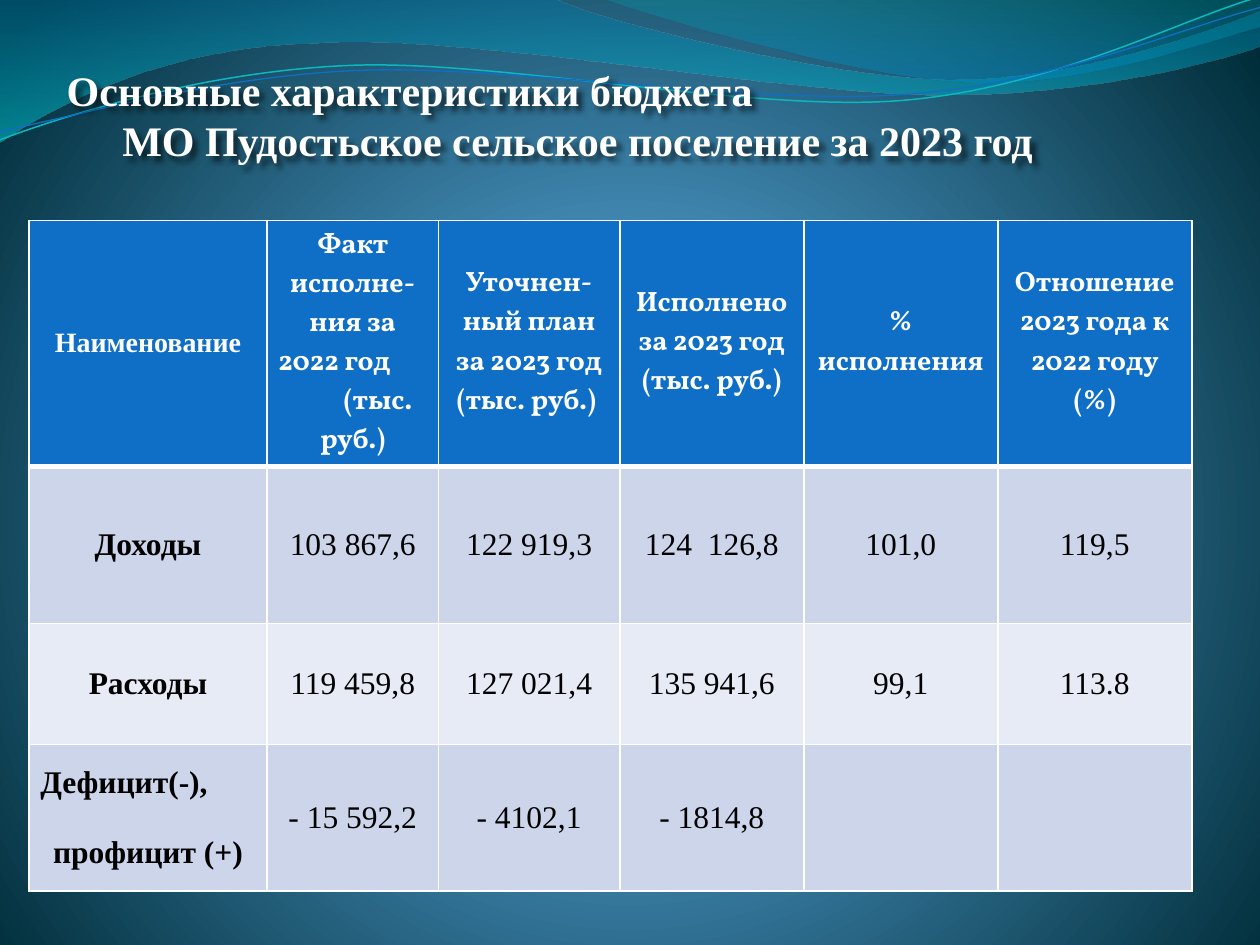
"""Budget summary slide: wave background, title and a table of income, expenses and balance."""
from lxml import etree
from pptx import Presentation
from pptx import util as u
from pptx.dml.color import RGBColor
from pptx.enum import text
from pptx.oxml import ns, parse_xml

Inches, Pt = u.Inches, u.Pt
COLORS = {
    "white": "FFFFFF", "black": "000000", "header": "0F6FC6",
    "band": "CCD5EA", "light": "E7EBF5", "cyan": "0AB8BF", "blue": "0F6FC6",
}
FONT, HEAD_FONT = "Times New Roman", "Vollkorn"


def gradient(stops, direction):
    """Return a gradFill element from (position, colour, opacity) stops."""
    gs = "".join(
        f'<a:gs pos="{pos * 1000}"><a:srgbClr val="{color}">'
        f'<a:alpha val="{alpha * 1000}"/></a:srgbClr></a:gs>'
        for pos, color, alpha in stops)
    return parse_xml(f'<a:gradFill {ns.nsdecls("a")} rotWithShape="1">'
                     f'<a:gsLst>{gs}</a:gsLst>{direction}</a:gradFill>')


def add_wave(shapes, start, segments, close):
    """Draw a freeform whose segments are line ends or cubic curves."""
    points = [(round(seg[k] * 100), round(seg[k + 1] * 100))
              for seg in segments for k in range(0, len(seg), 2)]
    builder = shapes.build_freeform(round(start[0] * 100), round(start[1] * 100),
                                    scale=Inches(0.01))
    builder.add_line_segments(points, close=close)
    sp = builder.convert_to_shape()
    sp.shadow.inherit = False
    lines = iter(list(sp.element.iter(ns.qn("a:lnTo"))))
    for seg in segments:
        line = next(lines)
        if len(seg) == 6:
            line.addprevious(curve := etree.Element(ns.qn("a:cubicBezTo")))
            for part in (line, next(lines), next(lines)):
                curve.append(part[0])
                part.getparent().remove(part)
    return sp


prs = Presentation()
prs.slide_width, prs.slide_height = Inches(10), Inches(7.5)
s = prs.slides.add_slide(prs.slide_layouts[6])

s.background.fill.solid()
bg = s.background.fill._xPr
bg.replace(bg.find(ns.qn("a:solidFill")), gradient(
    [(1, "1F6088", 100), (25, "4C98C7", 100), (100, "002C38", 100)],
    '<a:path path="circle"><a:fillToRect l="10000" t="110000" r="10000" b="100000"/></a:path>'))

waves = [
    ((0, 0), [(4.4, -0.01), (4.76, 0.17, 6.64, 0.63, 7.58, 0.63),
              (8.53, 0.63, 9.58, 0.26, 10, 0.09), (10.01, 0.36),
              (9.83, 0.44, 8.7, 0.76, 7.46, 0.75), (6.22, 0.75, 3.82, 0.28, 2.57, 0.34),
              (1.29, 0.36, 0.46, 0.83, -0.01, 1.13)],
     [(0, "0074A1", 45), (100, "00C6CF", 55)]),
    ((4.79, -0.01), [(5.09, 0.11, 6.82, 0.62, 7.69, 0.65),
                     (8.56, 0.69, 9.61, 0.32, 10, 0.21), (10, 0)],
     [(0, "00A1A9", 30), (80, "008BBF", 45)]),
]
for start, segments, stops in waves:
    sp = add_wave(s.shapes, start, segments, True)
    sp.line.fill.background()
    sp.fill.solid()
    props = sp.element.spPr
    props.replace(props.find(ns.qn("a:solidFill")),
                  gradient(stops, '<a:lin ang="5400000" scaled="1"/>'))

strands = [
    ((0, 1.11), [(0.48, 0.93, 1.58, 0.57, 2.77, 0.52), (3.95, 0.47, 5.93, 0.89, 7.13, 0.8),
                 (8.33, 0.71, 9.38, 0.15, 9.98, -0.02)], "cyan", 0.85),
    ((0, 1.04), [(0.47, 0.96, 1.64, 0.61, 2.83, 0.56), (4.03, 0.51, 5.97, 0.84, 7.17, 0.75),
                 (8.36, 0.67, 9.41, 0.21, 10, 0.06)], "blue", 0.75),
]
for start, segments, color, width in strands:
    sp = add_wave(s.shapes, start, segments, False)
    sp.fill.background()
    sp.line.color.rgb = RGBColor.from_string(COLORS[color])
    sp.line.width = Pt(width)

title = s.shapes.add_textbox(Inches(0.5), Inches(0.13), Inches(8.17), Inches(1.18))
title.element.spPr.append(parse_xml(
    f'<a:effectLst {ns.nsdecls("a")}><a:outerShdw blurRad="38100" dist="38100" dir="2700000">'
    '<a:srgbClr val="000000"><a:alpha val="60000"/></a:srgbClr></a:outerShdw></a:effectLst>'))
tf = title.text_frame
tf.word_wrap = True
tf.vertical_anchor = text.MSO_ANCHOR.BOTTOM
tf.margin_left = tf.margin_right = tf.margin_bottom = 0
tf.text = "Основные характеристики бюджета\nМО Пудостьское сельское поселение за 2023 год"
for p, align in zip(tf.paragraphs, (text.PP_ALIGN.LEFT, text.PP_ALIGN.CENTER)):
    p.alignment = align
    p.font.name, p.font.size, p.font.bold = FONT, Pt(24), True
    p.font.color.rgb = RGBColor.from_string(COLORS["white"])
tf.paragraphs[0]._p.get_or_add_pPr().set("marL", str(Inches(0.03)))

rows = [
    ["Наименование", "Факт исполне-ния за\n2022 год\n(тыс.\nруб.)",
     "Уточнен-ный план за 2023 год (тыс. руб.) ", "Исполнено за 2023 год (тыс. руб.)",
     "% исполнения", "Отношение 2023 года к 2022 году (%)"],
    ["Доходы", "103 867,6", "122 919,3", "124  126,8", "101,0", "119,5"],
    ["Расходы", "119 459,8", "127 021,4", "135 941,6", "99,1", "113.8"],
    ["Дефицит(-),\nпрофицит (+)", "- 15 592,2", "- 4102,1", "- 1814,8", "", ""],
]
fills = ["header", "band", "light", "band"]
widths = [1.89, 1.36, 1.44, 1.46, 1.54, 1.54]
heights = [1.95, 1.25, 0.96, 1.16]
table = s.shapes.add_table(len(rows), len(widths), Inches(0.23), Inches(1.75),
                           Inches(sum(widths)), Inches(sum(heights))).table
for column, width in zip(table.columns, widths):
    column.width = Inches(width)
for row, height in zip(table.rows, heights):
    row.height = Inches(height)

for i, values in enumerate(rows):
    for j, value in enumerate(values):
        cell = table.cell(i, j)
        cell.text = value
        cell.vertical_anchor = text.MSO_ANCHOR.MIDDLE
        cell.margin_left = cell.margin_right = Inches(0.09)
        tc_pr = cell._tc.get_or_add_tcPr()
        for side in "LRTB":
            heavy = (i, side) in ((0, "B"), (1, "T"))
            ln = etree.SubElement(tc_pr, ns.qn(f"a:ln{side}"), w=str(Pt(3 if heavy else 1)))
            solid = etree.SubElement(ln, ns.qn("a:solidFill"))
            etree.SubElement(solid, ns.qn("a:srgbClr"), val=COLORS["white"])
        cell.fill.solid()
        cell.fill.fore_color.rgb = RGBColor.from_string(COLORS[fills[i]])
        for p in cell.text_frame.paragraphs:
            p.alignment = text.PP_ALIGN.CENTER
            p.font.name = HEAD_FONT if i == 0 and j > 0 else FONT
            p.font.size = Pt(18 if i else 16)
            p.font.bold = i == 0 or j == 0
            p.font.color.rgb = RGBColor.from_string(COLORS["black" if i else "white"])

fact = table.cell(0, 1).text_frame.paragraphs
fact[1].alignment = text.PP_ALIGN.LEFT
fact[2]._p.get_or_add_pPr().set("marL", str(Inches(0.4)))

balance = table.cell(3, 0).text_frame.paragraphs
balance[0].alignment = text.PP_ALIGN.LEFT
balance[1].space_before = Pt(20)

prs.save("out.pptx")
